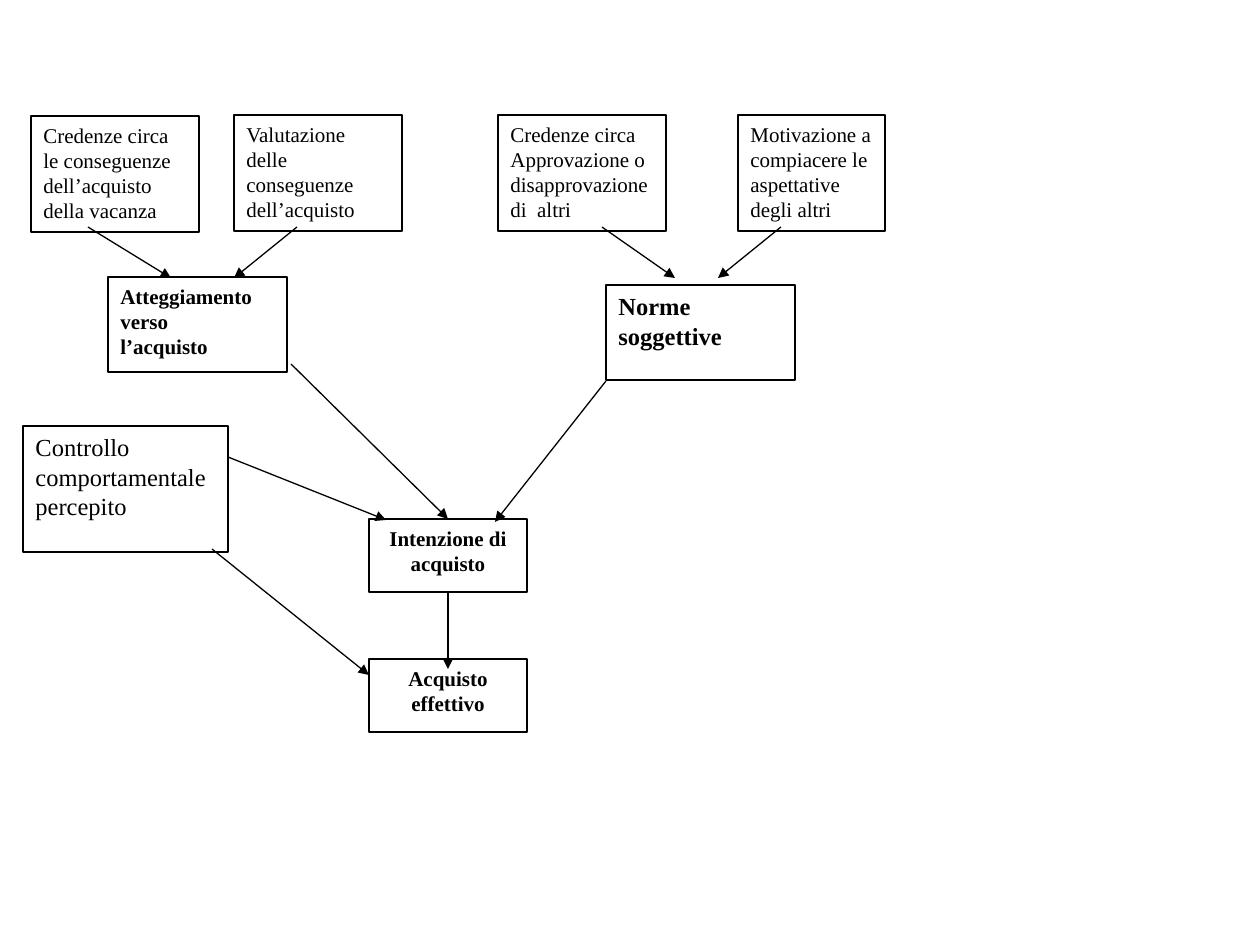
import pptx
import pptx.dml.color
import pptx.enum.shapes
import pptx.enum.text
import pptx.oxml.ns
import pptx.util
from lxml import etree

EMU_PER_PX = 914400 / 126
BLACK = pptx.dml.color.RGBColor(0, 0, 0)
WHITE = pptx.dml.color.RGBColor(255, 255, 255)
FONT = "Times New Roman"
LEFT = pptx.enum.text.PP_ALIGN.LEFT
CENTER = pptx.enum.text.PP_ALIGN.CENTER


def px(value):
    return pptx.util.Emu(round(value * EMU_PER_PX))


def add_box(slide, left, top, width, height, text, size=12, bold=False, align=LEFT):
    shape = slide.shapes.add_shape(
        pptx.enum.shapes.MSO_SHAPE.RECTANGLE, px(left), px(top), px(width), px(height))
    shape.shadow.inherit = False
    shape.fill.solid()
    shape.fill.fore_color.rgb = WHITE
    shape.line.color.rgb = BLACK
    shape.line.width = pptx.util.Pt(0.75)
    text_frame = shape.text_frame
    text_frame.word_wrap = True
    text_frame.vertical_anchor = pptx.enum.text.MSO_ANCHOR.TOP
    text_frame.text = text
    for paragraph in text_frame.paragraphs:
        paragraph.alignment = align
        for run in paragraph.runs:
            run.font.name = FONT
            run.font.size = pptx.util.Pt(size)
            run.font.bold = bold
            run.font.color.rgb = BLACK
    return shape


def add_arrow(slide, x1, y1, x2, y2):
    connector = slide.shapes.add_connector(
        pptx.enum.shapes.MSO_CONNECTOR.STRAIGHT, px(x1), px(y1), px(x2), px(y2))
    connector.line.color.rgb = BLACK
    connector.line.width = pptx.util.Pt(0.75)
    line = connector.line._get_or_add_ln()
    etree.SubElement(line, pptx.oxml.ns.qn("a:tailEnd"), type="triangle")
    etree.SubElement(connector._element.spPr, pptx.oxml.ns.qn("a:effectLst"))
    return connector


def add_branch(slide, left, top, causes, result, result_size, arrows):
    for x, y, width, text in causes:
        add_box(slide, left + x, top + y, width, 116, text)
    x, y, width, text = result
    add_box(slide, left + x, top + y, width, 95, text, result_size, bold=True)
    for start, end in arrows:
        add_arrow(slide, left + start, top + 112, left + end, top + 163)


def add_outcome(slide, left, top):
    intention, purchase = [
        add_box(slide, left, top + offset, 158, 73, text, bold=True, align=CENTER)
        for offset, text in ((0, "Intenzione di\nacquisto"), (140, "Acquisto effettivo"))]
    arrow = add_arrow(slide, left + 79, top + 73, left + 79, top + 150)
    arrow.begin_connect(intention, 2)
    return intention


def add_control(slide, left, top):
    add_box(slide, left, top, 205, 126, "Controllo comportamentale\npercepito", 14)
    add_arrow(slide, left + 205, top + 31, left + 363, top + 94)
    add_arrow(slide, left + 189, top + 123, left + 346, top + 249)


def main():
    presentation = pptx.Presentation()
    presentation.slide_width = px(1260)
    presentation.slide_height = px(945)
    slide = presentation.slides.add_slide(presentation.slide_layouts[6])

    add_branch(
        slide, 31, 115,
        [(0, 1, 168, "Credenze circa le conseguenze\ndell’acquisto della vacanza"),
         (203, 0, 168, "Valutazione delle conseguenze dell’acquisto")],
        (77, 162, 179, "Atteggiamento verso\nl’acquisto"), 12,
        [(57, 140), (266, 203)])
    add_branch(
        slide, 498, 115,
        [(0, 0, 168, "Credenze circa\nApprovazione o disapprovazione di  altri"),
         (240, 0, 147, "Motivazione a compiacere le aspettative\ndegli altri")],
        (108, 170, 189, "Norme\nsoggettive"), 14,
        [(104, 177), (283, 220)])
    intention = add_outcome(slide, 369, 519)
    add_control(slide, 23, 426)

    attitude_arrow = add_arrow(slide, 291, 364, 448, 519)
    attitude_arrow.end_connect(intention, 0)
    add_arrow(slide, 606, 381, 495, 522)
    presentation.save("out.pptx")


if __name__ == "__main__":
    main()
